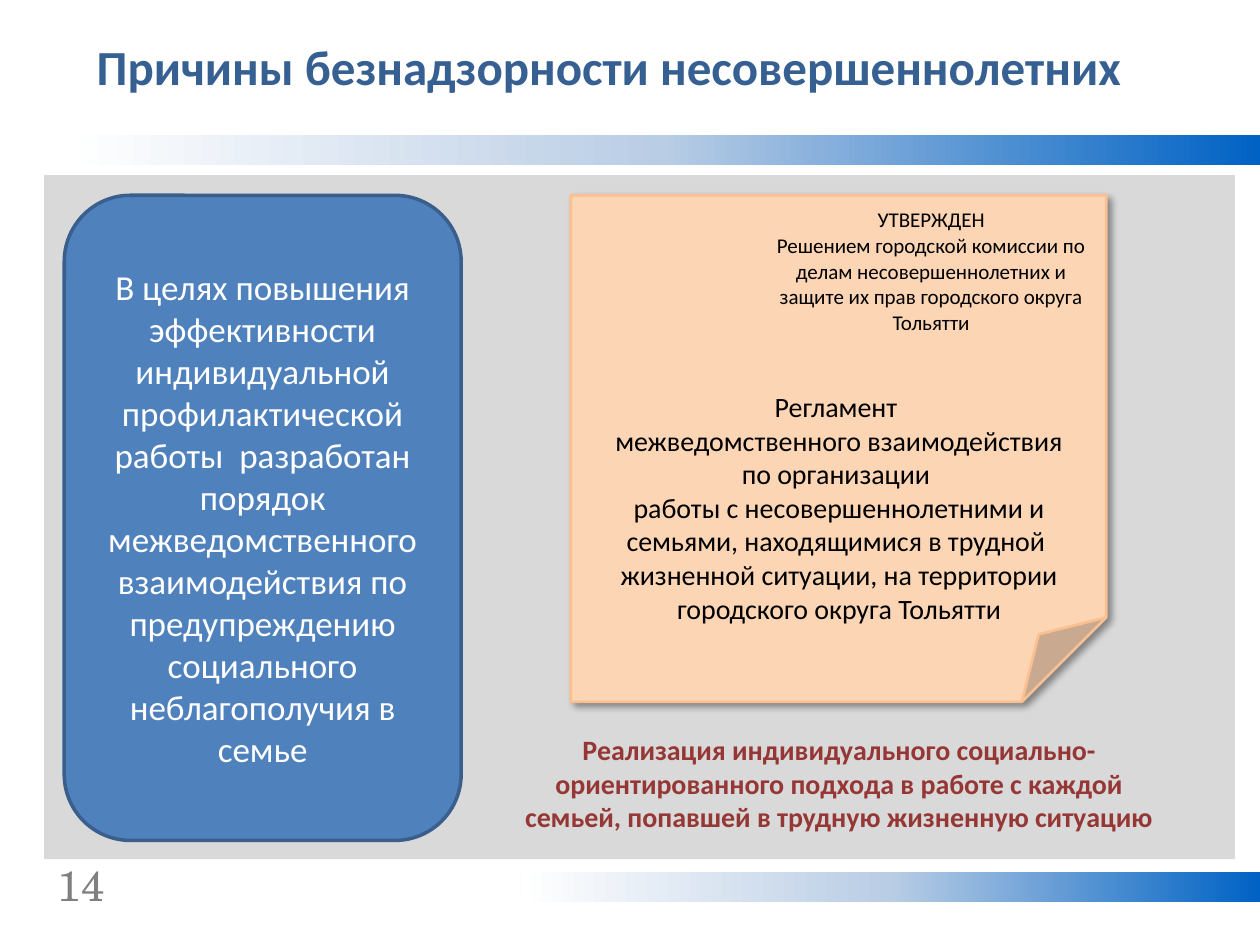
from copy import deepcopy

from lxml.etree import SubElement
from pptx import Presentation
from pptx.dml.color import RGBColor
from pptx.enum.shapes import MSO_SHAPE as Shape
from pptx.enum.text import MSO_ANCHOR as Anchor, MSO_AUTO_SIZE as AutoSize, PP_ALIGN as Align
from pptx.oxml import parse_xml
from pptx.oxml.ns import nsdecls, qn
from pptx.util import Inches, Pt

HEADING = "Причины безнадзорности несовершеннолетних"
PURPOSE = (
    "В целях повышения эффективности индивидуальной профилактической работы  разработан "
    "порядок межведомственного взаимодействия по предупреждению социального неблагополучия в семье"
)
APPROVAL = [
    "УТВЕРЖДЕН",
    "Решением городской комиссии по делам несовершеннолетних и защите их прав "
    "городского округа Тольятти",
]
REGULATION = [
    "Регламент ",
    "межведомственного взаимодействия по организации ",
    "работы с несовершеннолетними и семьями, находящимися в трудной ",
    "жизненной ситуации, на территории городского округа Тольятти",
]
CONCLUSION = (
    "Реализация индивидуального социально-ориентированного подхода в работе с каждой "
    "семьей, попавшей в трудную жизненную ситуацию"
)
PAGE_NUMBER = "14"

BAND_STOPS = [(0, "0062C4"), (0.5, "B9CDE5"), (1, "FFFFFF")]
BANDS = [(0.51, 1.07, 9.49, 0.24), (4.13, 6.92, 5.87, 0.24)]


def color(code):
    return RGBColor.from_string(code)


def write(frame, lines, size=16, font="Calibri", ink="000000", bold=False,
          align=Align.CENTER, anchor=Anchor.TOP):
    """Fill a text frame or table cell with one paragraph per line."""
    for number, line in enumerate(lines):
        para = frame.paragraphs[0] if number == 0 else frame.add_paragraph()
        para.alignment = align
        span = para.add_run()
        span.text = line
        span.font.size = Pt(size)
        span.font.name = font
        span.font.bold = bold
        span.font.color.rgb = color(ink)
    frame.vertical_anchor = anchor


def add_box(page, place, kind=Shape.RECTANGLE, fill=None, line=None, width=1):
    box = page.shapes.add_shape(kind, *map(Inches, place))
    box.shadow.inherit = False
    if fill:
        box.fill.solid()
        box.fill.fore_color.rgb = color(fill)
    if line:
        box.line.color.rgb = color(line)
        box.line.width = Pt(width)
    else:
        box.line.fill.background()
    return box


def add_text(page, place, lines, **style):
    frame = page.shapes.add_textbox(*map(Inches, place)).text_frame
    frame.word_wrap = True
    frame.auto_size = AutoSize.SHAPE_TO_FIT_TEXT
    write(frame, lines, **style)


def add_band(page, place):
    """Add a bar that fades out towards the left."""
    band = add_box(page, place)
    band.fill.gradient()
    band.fill.gradient_angle = 180
    stop_list = band._element.spPr.find(".//" + qn("a:gsLst"))
    stop_list.append(deepcopy(stop_list[0]))
    for stop, (position, code) in zip(band.fill.gradient_stops, BAND_STOPS):
        stop.position = position
        stop.color.rgb = color(code)


def add_drop_shadow(box):
    effects = box._element.spPr.find(qn("a:effectLst"))
    effects.append(parse_xml(
        f'<a:outerShdw {nsdecls("a")} blurRad="{Pt(4)}" dist="{Pt(3)}" dir="2700000" '
        'algn="tl" rotWithShape="0"><a:srgbClr val="000000"><a:alpha val="40000"/>'
        '</a:srgbClr></a:outerShdw>'))


def add_approval(page, place):
    """Add the approval stamp as a one-cell table without fill or borders."""
    table = page.shapes.add_table(1, 1, *map(Inches, place)).table
    table.first_row = table.horz_banding = False
    cell = table.cell(0, 0)
    cell.margin_left = cell.margin_right = Inches(0.07)
    cell.margin_top = cell.margin_bottom = 0
    write(cell.text_frame, APPROVAL, size=12)
    cell.text_frame.paragraphs[0].line_spacing = 1.15
    properties = cell._tc.get_or_add_tcPr()
    for side in ("lnL", "lnR", "lnT", "lnB"):
        SubElement(SubElement(properties, qn("a:" + side)), qn("a:noFill"))
    cell.fill.background()


def set_conclusion(page, place):
    title = page.shapes.title
    title.left, title.top, title.width, title.height = map(Inches, place)
    title.text_frame.word_wrap = True
    title.text_frame.auto_size = AutoSize.NONE
    write(title.text_frame, [CONCLUSION], ink="953735", bold=True, anchor=Anchor.MIDDLE)
    page.shapes._spTree.append(title._element)  # in front of the grey panel


def main():
    deck = Presentation()
    deck.slide_width, deck.slide_height = Inches(10), Inches(7.5)
    page = deck.slides.add_slide(deck.slide_layouts[5])

    for place in BANDS:
        add_band(page, place)
    add_text(page, (0.36, 6.77, 0.78, 0.5), [PAGE_NUMBER], size=24,
             font="TeX Gyre Schola", ink="808080", align=Align.LEFT)
    add_box(page, (0.35, 1.39, 9.45, 5.43), fill="D9D9D9")
    add_text(page, (0.28, 0.24, 9.1, 0.57), [HEADING], size=28, ink="376092", bold=True)

    purpose = add_box(page, (0.51, 1.55, 3.15, 5.12), Shape.ROUNDED_RECTANGLE,
                      fill="4F81BD", line="3A5F8C", width=2)
    write(purpose.text_frame, [PURPOSE], size=20, ink="FFFFFF", anchor=Anchor.MIDDLE)

    note = add_box(page, (4.53, 1.55, 4.25, 4.02), Shape.FOLDED_CORNER,
                   fill="FCD5B5", line="FAC090", width=1.5)
    add_drop_shadow(note)
    add_text(page, (4.69, 3.03, 3.94, 1.99), REGULATION, anchor=Anchor.MIDDLE)
    add_approval(page, (6.02, 1.62, 2.74, 1.18))
    set_conclusion(page, (4.06, 5.64, 5.2, 1.15))

    deck.save("out.pptx")


if __name__ == "__main__":
    main()
